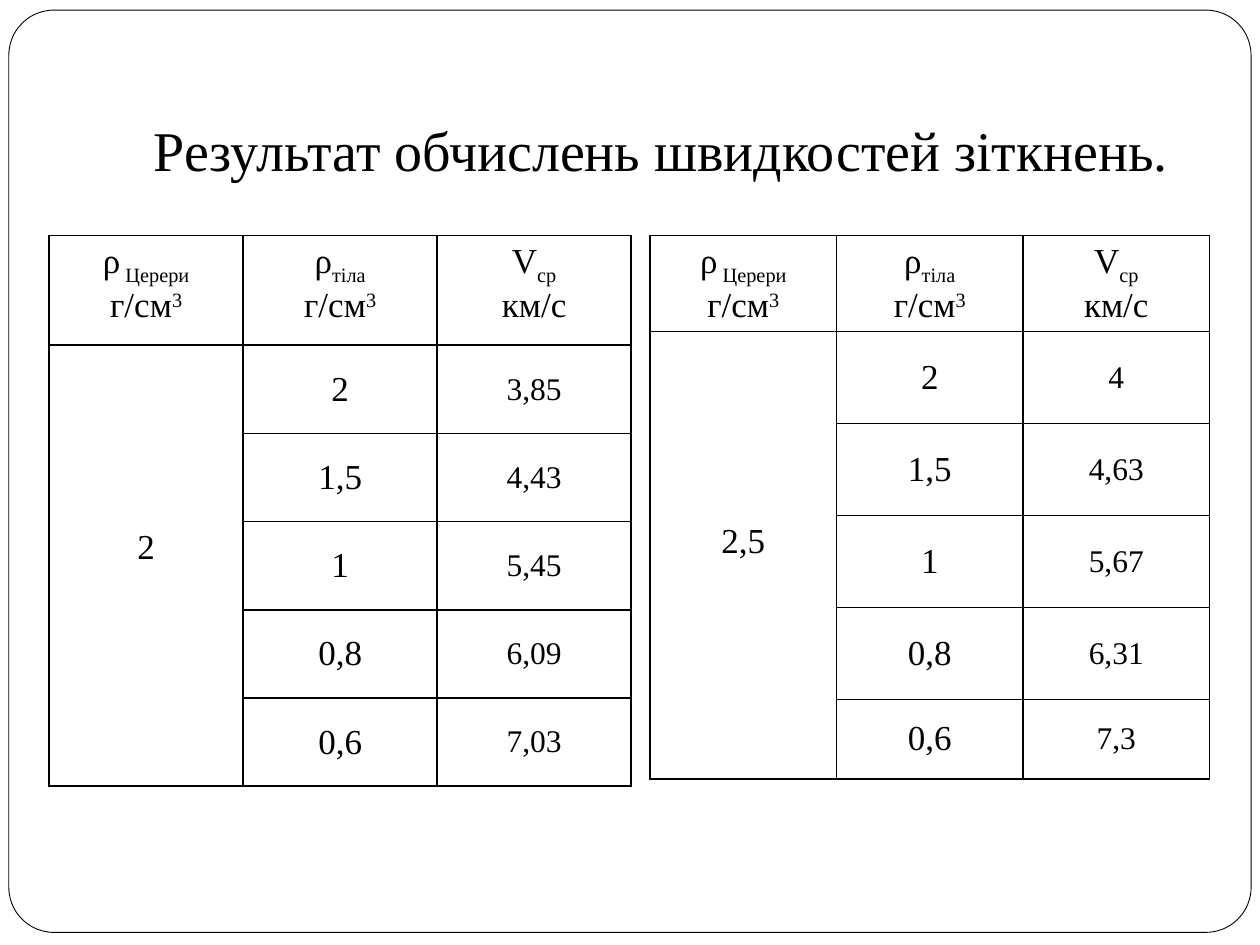
from lxml import etree
from pptx import Presentation
from pptx.dml.color import RGBColor
from pptx.enum.shapes import MSO_SHAPE
from pptx.enum.text import MSO_ANCHOR, PP_ALIGN
from pptx.oxml.ns import qn
from pptx.util import Inches, Pt

CENTER = PP_ALIGN.CENTER
TOP, MIDDLE, BOTTOM = MSO_ANCHOR.TOP, MSO_ANCHOR.MIDDLE, MSO_ANCHOR.BOTTOM
ROUND = MSO_SHAPE.ROUNDED_RECTANGLE
COLORS = {"ink": "000000", "paper": "FFFFFF"}
INK = RGBColor.from_string(COLORS["ink"])
FONT = "Times New Roman"

# Each header is a list of lines, each line a list of (text, baseline in percent)
UNIT = [("г/см", 0), ("3", 30)]
HEADS = [
    [[("ρ", 0), (" Церери", -25)], UNIT],
    [[("ρ", 0), ("тіла", -25)], UNIT],
    [[("V", 0), ("ср", -25)], [("км/с", 0)]],
]
BODIES = ["2", "1,5", "1", "0,8", "0,6"]
TABLES = [
    {"left": 0.39, "col": 1.54, "rows": [0.87] + [0.7] * 5, "ceres": "2",
     "speeds": ["3,85", "4,43", "5,45", "6,09", "7,03"]},
    {"left": 5.16, "col": 1.48, "rows": [0.73] * 5 + [0.63], "ceres": "2,5",
     "speeds": ["4", "4,63", "5,67", "6,31", "7,3"]},
]


def write(frame, lines, size):
    for i, line in enumerate(lines):
        para = frame.paragraphs[0] if i == 0 else frame.add_paragraph()
        para.alignment = CENTER
        for text, base in line:
            run = para.add_run()
            run.text = text
            style = {"name": FONT, "size": Pt(size), "bold": False}
            for key, value in style.items():
                setattr(run.font, key, value)
            run.font.color.rgb = INK
            if base:
                run.font._element.set("baseline", str(base * 1000))


def border(cell, sides):
    props = cell._tc.get_or_add_tcPr()
    for side in "LRTB":
        line = etree.SubElement(props, qn("a:ln" + side), w=str(Pt(1)))
        if side in sides:
            fill = etree.SubElement(line, qn("a:solidFill"))
            etree.SubElement(fill, qn("a:srgbClr"), val=COLORS["ink"])
        else:
            etree.SubElement(line, qn("a:noFill"))


prs = Presentation()
prs.slide_width, prs.slide_height = Inches(10), Inches(7.5)
slide = prs.slides.add_slide(prs.slide_layouts[5])
shapes = slide.shapes
title = shapes.title

# Rounded frame behind everything
frame = shapes.add_shape(ROUND, Inches(0.07), Inches(0.08), Inches(9.86), Inches(7.32))
frame.adjustments[0] = 0.049
frame.shadow.inherit = False
frame.fill.solid()
frame.fill.fore_color.rgb = RGBColor.from_string(COLORS["paper"])
frame.line.color.rgb = INK
frame.line.width = Pt(0.5)
title._element.addprevious(frame._element)

# Title
place = {"left": 1, "top": 0.3, "width": 8.5, "height": 1.25}
for key, value in place.items():
    setattr(title, key, Inches(value))
inset = {"margin_left": 0.1, "margin_top": 0.05, "margin_right": 0.1, "margin_bottom": 0.1}
for key, value in inset.items():
    setattr(title.text_frame, key, Inches(value))
title.text_frame.vertical_anchor = BOTTOM
write(title.text_frame, [[("Результат обчислень швидкостей зіткнень.", 0)]], 32)

# Tables: the first column is open between its rows, with the density in the third
for spec in TABLES:
    count = len(spec["rows"])
    table = shapes.add_table(count, len(HEADS), Inches(spec["left"]), Inches(1.87),
                             Inches(spec["col"] * len(HEADS)),
                             Inches(sum(spec["rows"]))).table
    table.first_row = table.horz_banding = False
    for col in table.columns:
        col.width = Inches(spec["col"])
    for r, height in enumerate(spec["rows"]):
        table.rows[r].height = Inches(height)
        for c, head in enumerate(HEADS):
            cell = table.cell(r, c)
            sides = "LRTB"
            if c == 0 and r > 0:
                sides = "LR" + ("T" if r == 1 else "") + ("B" if r == count - 1 else "")
            border(cell, sides)
            cell.fill.background()
            cell.vertical_anchor = MIDDLE if r and c else TOP
            if r == 0:
                write(cell.text_frame, head, 20)
            elif c == 0:
                if r == 3:
                    write(cell.text_frame, [[(spec["ceres"], 0)]], 20)
            else:
                text = BODIES[r - 1] if c == 1 else spec["speeds"][r - 1]
                write(cell.text_frame, [[(text, 0)]], 20 if c == 1 else 18)

prs.save("out.pptx")
